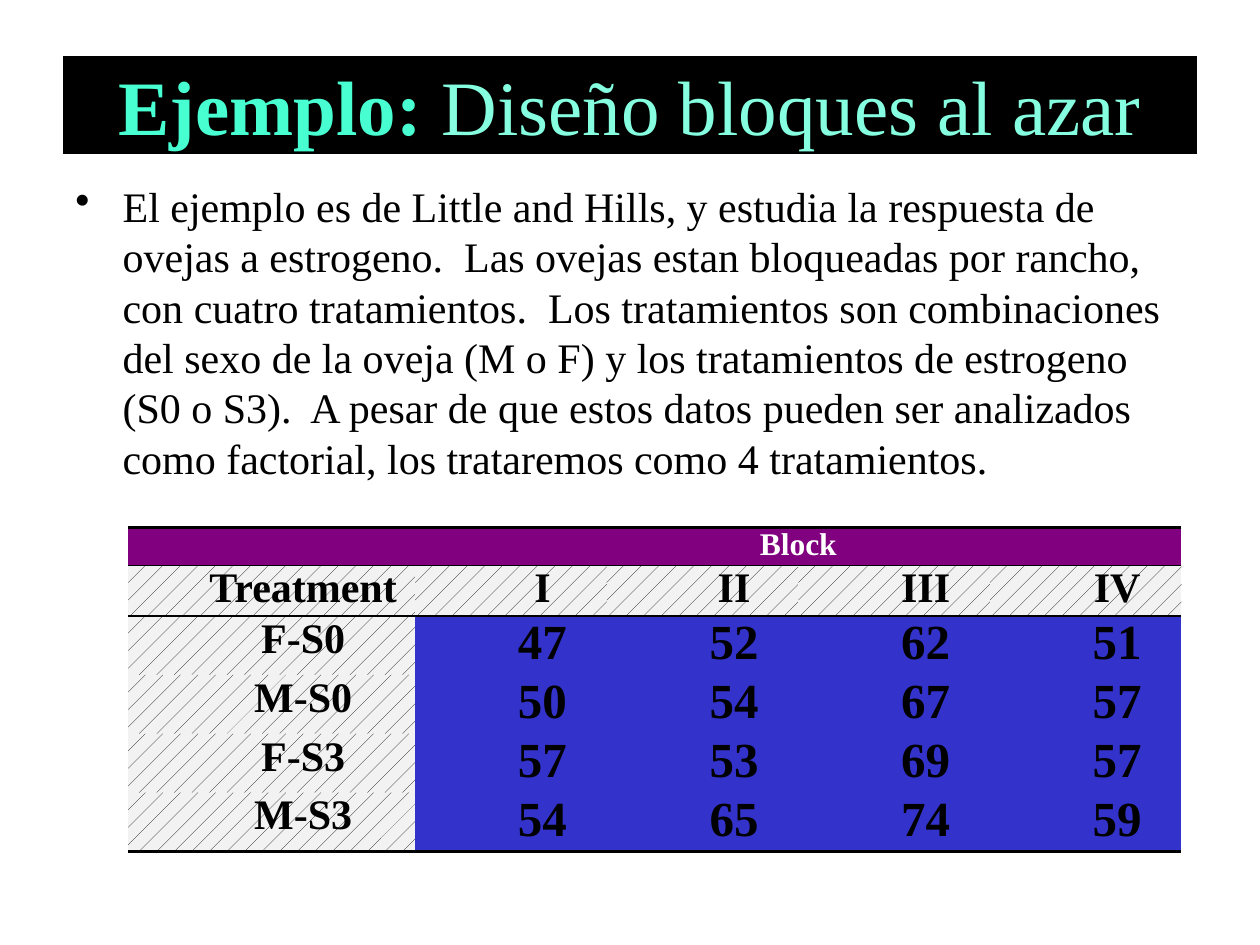
from lxml import etree
from pptx import Presentation
from pptx.dml.color import RGBColor
from pptx.enum.dml import MSO_PATTERN
from pptx.enum.text import MSO_ANCHOR, MSO_AUTO_SIZE, PP_ALIGN
from pptx.oxml import parse_xml
from pptx.oxml.ns import nsdecls, qn
from pptx.util import Pt

CENTER = PP_ALIGN.CENTER
MIDDLE = MSO_ANCHOR.MIDDLE
NO_AUTOFIT = MSO_AUTO_SIZE.NONE
DOTTED = MSO_PATTERN.PERCENT_5
FONT = "Times New Roman"
NO_STYLE = "{2D5ABB26-0587-4C30-8999-92F81FD0307C}"


def color(hex_code):
    return RGBColor.from_string(hex_code)


def style(span, size, hex_code, bold=False):
    span.font.name = FONT
    span.font.size = Pt(size)
    span.font.bold = bold
    span.font.color.rgb = color(hex_code)


deck = Presentation()
deck.slide_width, deck.slide_height = Pt(720), Pt(540)
page = deck.slides.add_slide(deck.slide_layouts[5])

# Title bar
title = page.shapes.title
title.left, title.top, title.width, title.height = Pt(36), Pt(32), Pt(648), Pt(56)
title.fill.solid()
title.fill.fore_color.rgb = color("000000")
title.text_frame.auto_size = NO_AUTOFIT
title.text_frame.vertical_anchor = MIDDLE
para = title.text_frame.paragraphs[0]
para.alignment = CENTER
for text, hex_code, bold in [("Ejemplo: ", "47FFD1", True),
                             ("Diseño bloques al azar", "85FFE0", False)]:
    span = para.add_run()
    span.text = text
    style(span, 44, hex_code, bold)

# Description with a bullet
box = page.shapes.add_textbox(Pt(36), Pt(99.5), Pt(648), Pt(196.5))
box.text_frame.word_wrap = True
para = box.text_frame.paragraphs[0]
para.text = (
    "El ejemplo es de Little and Hills, y estudia la respuesta de ovejas a "
    "estrogeno.  Las ovejas estan bloqueadas por rancho, con cuatro "
    "tratamientos.  Los tratamientos son combinaciones del sexo de la oveja "
    "(M o F) y los tratamientos de estrogeno  (S0 o S3).  A pesar de que estos "
    "datos pueden ser analizados como factorial, los trataremos como 4 "
    "tratamientos.")
para.line_spacing = Pt(28.8)
style(para.runs[0], 24, "000000")
properties = para._p.get_or_add_pPr()
properties.set("marL", str(Pt(27)))
properties.set("indent", str(Pt(-27)))
etree.SubElement(properties, qn("a:buChar")).set("char", "•")

# Table of responses by treatment and block
rows = [
    ["", "Block", "", "", ""],
    ["Treatment", "I", "II", "III", "IV"],
    ["F-S0", "47", "52", "62", "51"],
    ["M-S0", "50", "54", "67", "57"],
    ["F-S3", "57", "53", "69", "57"],
    ["M-S3", "54", "65", "74", "59"],
]
column_widths = [164, 109.5, 109.5, 109.5, 109.5]
row_heights = [20.5, 27, 31, 31, 31, 31]
# Row index: line widths above and below
rules = {0: {"T": 1.5, "B": 1}, 1: {"T": 1}, 5: {"B": 1.5}}

frame = page.shapes.add_table(len(rows), len(column_widths), Pt(73.25), Pt(301.5),
                              Pt(sum(column_widths)), Pt(sum(row_heights)))
table = frame.table
table.first_row = table.horz_banding = False
table._tbl.tblPr.find(qn("a:tableStyleId")).text = NO_STYLE
for column, width in zip(table.columns, column_widths):
    column.width = Pt(width)
for row, height in zip(table.rows, row_heights):
    row.height = Pt(height)

for r, values in enumerate(rows):
    for c, value in enumerate(values):
        cell = table.cell(r, c)
        cell.margin_left = cell.margin_right = Pt(5)
        cell.margin_top = cell.margin_bottom = 0

        # Fill: purple heading, hatched labels, blue data
        is_label = r == 1 or (r > 1 and c == 0)
        if is_label:
            cell.fill.patterned()
            cell.fill.pattern = DOTTED
            cell.fill.fore_color.rgb = color("000000")
            cell.fill.back_color.rgb = color("F2F2F2")
        else:
            cell.fill.solid()
            cell.fill.fore_color.rgb = color("800080" if r == 0 else "3333CC")

        # Horizontal rules
        for side in "BT":
            if side in rules.get(r, {}):
                cell._tc.get_or_add_tcPr().insert(0, parse_xml(
                    f'<a:ln{side} {nsdecls("a")} w="{Pt(rules[r][side])}">'
                    '<a:solidFill><a:srgbClr val="000000"/></a:solidFill>'
                    f'</a:ln{side}>'))

        # Text
        para = cell.text_frame.paragraphs[0]
        para.alignment = CENTER
        if not value:
            etree.SubElement(para._p, qn("a:endParaRPr")).set("sz", "1200")
            continue
        para.text = value
        if r == 0:
            para.space_before = Pt(6)
            style(para.runs[0], 18, "FFFFFF", True)
        else:
            para._p.get_or_add_pPr().set("indent", str(Pt(36)))
            style(para.runs[0], 24 if is_label else 28, "000000", True)
        if r == 1:
            para.space_before = para.space_after = Pt(3)

table.cell(0, 1).merge(table.cell(0, 4))

deck.save("out.pptx")
